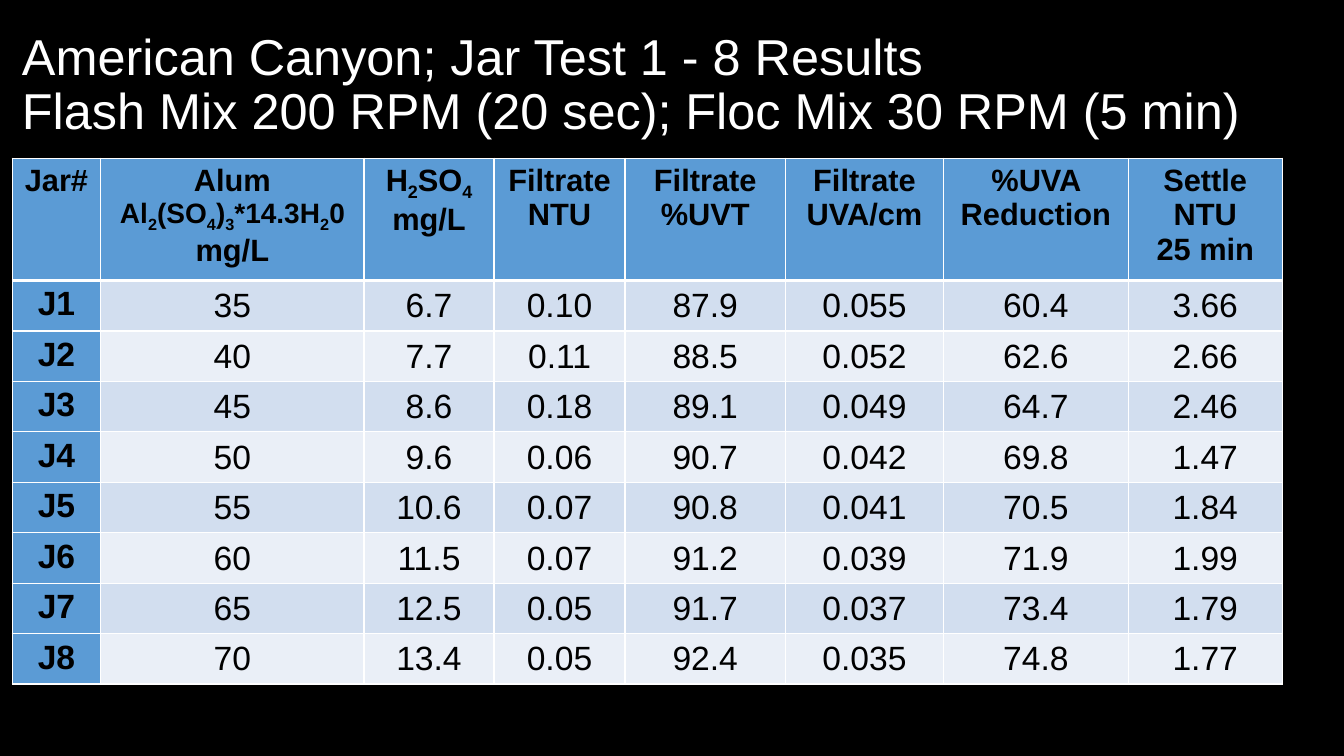
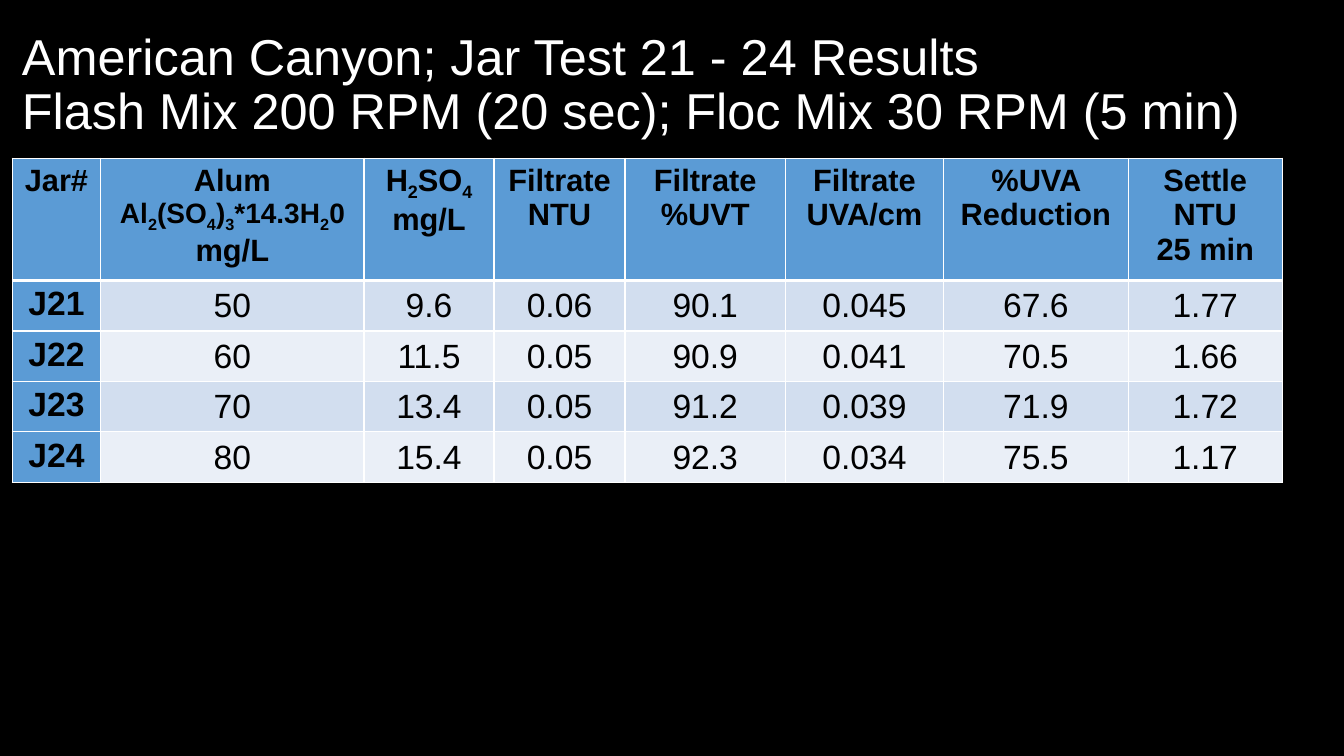
from dataclasses import dataclass

from lxml.etree import SubElement
from pptx import Presentation
from pptx.dml.color import RGBColor as Rgb
from pptx.enum.text import MSO_ANCHOR as Anchor, PP_ALIGN as Align
from pptx.oxml.ns import qn
from pptx.util import Inches, Pt


@dataclass(frozen=True)
class Theme:
    """Colours, type sizes and line widths shared by the slides."""
    font: str = "Arial"
    background: str = "000000"
    title: str = "FFFFFF"
    ink: str = "000000"
    border: str = "FFFFFF"
    accent: str = "5B9BD5"
    bands: tuple = ("D2DEEF", "EAEFF7")
    title_size: int = 36
    header_size: int = 22
    formula_size: int = 20
    body_size: int = 24
    thin: int = 1
    thick: int = 3


THEME = Theme()
TITLE_BOX = (0.12, 0.13, 13.03, 1.45)
TABLE_ORIGIN = (0.12, 1.57)
COLUMN_WIDTHS = (0.88, 2.61, 1.29, 1.3, 1.59, 1.57, 1.83, 1.53)
HEADER_HEIGHT, ROW_HEIGHT = 1.15, 0.47
MIXING = "Flash Mix 200 RPM (20 sec); Floc Mix 30 RPM (5 min)"
FORMULA = "Al_2(SO_4)_3*14.3H_20"
HEADERS = (
    ("Jar#",),
    ("Alum", FORMULA, "mg/L"),
    ("H_2SO_4", "mg/L"),
    ("Filtrate", "NTU"),
    ("Filtrate", "%UVT"),
    ("Filtrate", "UVA/cm"),
    ("%UVA Reduction",),
    ("Settle", "NTU", "25 min"),
)
RESULTS = (
    ("American Canyon; Jar Test 1 - 8 Results", (
        ("J1", "35", "6.7", "0.10", "87.9", "0.055", "60.4", "3.66"),
        ("J2", "40", "7.7", "0.11", "88.5", "0.052", "62.6", "2.66"),
        ("J3", "45", "8.6", "0.18", "89.1", "0.049", "64.7", "2.46"),
        ("J4", "50", "9.6", "0.06", "90.7", "0.042", "69.8", "1.47"),
        ("J5", "55", "10.6", "0.07", "90.8", "0.041", "70.5", "1.84"),
        ("J6", "60", "11.5", "0.07", "91.2", "0.039", "71.9", "1.99"),
        ("J7", "65", "12.5", "0.05", "91.7", "0.037", "73.4", "1.79"),
        ("J8", "70", "13.4", "0.05", "92.4", "0.035", "74.8", "1.77"),
    )),
    ("American Canyon; Jar Test 21 - 24 Results", (
        ("J21", "50", "9.6", "0.06", "90.1", "0.045", "67.6", "1.77"),
        ("J22", "60", "11.5", "0.05", "90.9", "0.041", "70.5", "1.66"),
        ("J23", "70", "13.4", "0.05", "91.2", "0.039", "71.9", "1.72"),
        ("J24", "80", "15.4", "0.05", "92.3", "0.034", "75.5", "1.17"),
    )),
)


def add_run(paragraph, text, size, color, bold=False, subscript=False):
    """Add one formatted run to a paragraph."""
    run = paragraph.add_run()
    run.text = text
    run.font.name = THEME.font
    run.font.size = Pt(size)
    run.font.bold = bold
    run.font.color.rgb = Rgb.from_string(color)
    if subscript:
        run._r.get_or_add_rPr().set("baseline", "-25000")


def add_marked_text(paragraph, text, size, bold):
    """Add text in which an underscore lowers the character after it."""
    plain, *lowered = text.split("_")
    add_run(paragraph, plain, size, THEME.ink, bold)
    for part in lowered:
        add_run(paragraph, part[0], size, THEME.ink, bold, subscript=True)
        if part[1:]:
            add_run(paragraph, part[1:], size, THEME.ink, bold)


def style_cell(cell, fill, top, bottom):
    """Give a cell its four borders and its fill."""
    properties = cell._tc.get_or_add_tcPr()
    sides = (("L", THEME.thin), ("R", THEME.thin), ("T", top), ("B", bottom))
    for side, width in sides:
        line = SubElement(properties, qn(f"a:ln{side}"), w=str(Pt(width)))
        solid = SubElement(line, qn("a:solidFill"))
        SubElement(solid, qn("a:srgbClr"), val=THEME.border)
    cell.fill.solid()
    cell.fill.fore_color.rgb = Rgb.from_string(fill)


def write_cell(cell, lines, size, bold):
    """Write centred lines, one paragraph each."""
    frame = cell.text_frame
    for index, text in enumerate(lines):
        paragraph = frame.add_paragraph() if index else frame.paragraphs[0]
        paragraph.alignment = Align.CENTER
        line_size = THEME.formula_size if text == FORMULA else size
        add_marked_text(paragraph, text, line_size, bold)


def add_title(slide, box, lines):
    """Place the title lines in the given box."""
    frame = slide.shapes.add_textbox(*map(Inches, box)).text_frame
    frame.word_wrap = True
    frame.vertical_anchor = Anchor.MIDDLE
    paragraph = frame.paragraphs[0]
    paragraph.line_spacing = 0.9
    for index, text in enumerate(lines):
        if index:
            paragraph.add_line_break()
        add_run(paragraph, text, THEME.title_size, THEME.title)


def add_results_table(slide, origin, rows):
    """Place the jar test table with its top left corner at the origin."""
    heights = [HEADER_HEIGHT] + [ROW_HEIGHT] * len(rows)
    box = (*origin, sum(COLUMN_WIDTHS), sum(heights))
    table = slide.shapes.add_table(
        len(heights), len(COLUMN_WIDTHS), *map(Inches, box)).table
    table.first_col = True
    for column, width in zip(table.columns, COLUMN_WIDTHS):
        column.width = Inches(width)
    for row, height in zip(table.rows, heights):
        row.height = Inches(height)

    for column, lines in enumerate(HEADERS):
        cell = table.cell(0, column)
        style_cell(cell, THEME.accent, THEME.thin, THEME.thick)
        write_cell(cell, lines, THEME.header_size, bold=True)

    for row, values in enumerate(rows, start=1):
        band = THEME.bands[(row - 1) % len(THEME.bands)]
        top = THEME.thick if row == 1 else THEME.thin
        for column, value in enumerate(values):
            cell = table.cell(row, column)
            is_label = column == 0
            style_cell(cell, THEME.accent if is_label else band, top, THEME.thin)
            write_cell(cell, (value,), THEME.body_size, bold=is_label)
            if not is_label:
                cell.vertical_anchor = Anchor.MIDDLE
                cell.margin_left = cell.margin_right = Inches(0.01)
                cell.margin_top, cell.margin_bottom = Inches(0.01), Inches(0)


def add_results_slide(presentation, heading, rows):
    """Add one slide of jar test results."""
    slide = presentation.slides.add_slide(presentation.slide_layouts[6])
    add_title(slide, TITLE_BOX, (heading, MIXING))
    add_results_table(slide, TABLE_ORIGIN, rows)


def main():
    """Build and save the presentation."""
    presentation = Presentation()
    presentation.slide_width = Inches(13.33)
    presentation.slide_height = Inches(7.5)
    background = presentation.slide_master.background.fill
    background.solid()
    background.fore_color.rgb = Rgb.from_string(THEME.background)
    for heading, rows in RESULTS:
        add_results_slide(presentation, heading, rows)
    presentation.save("out.pptx")


if __name__ == "__main__":
    main()
